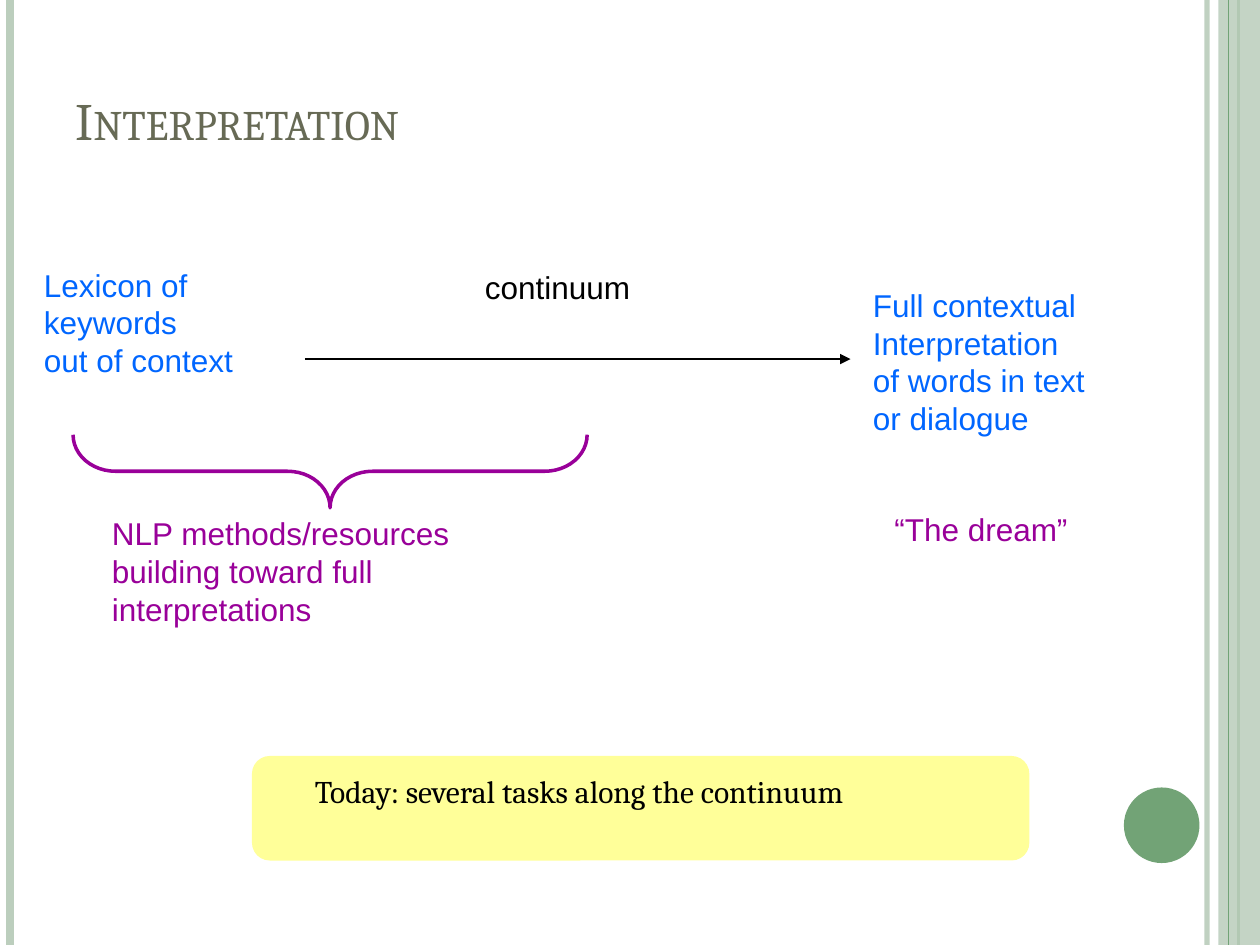
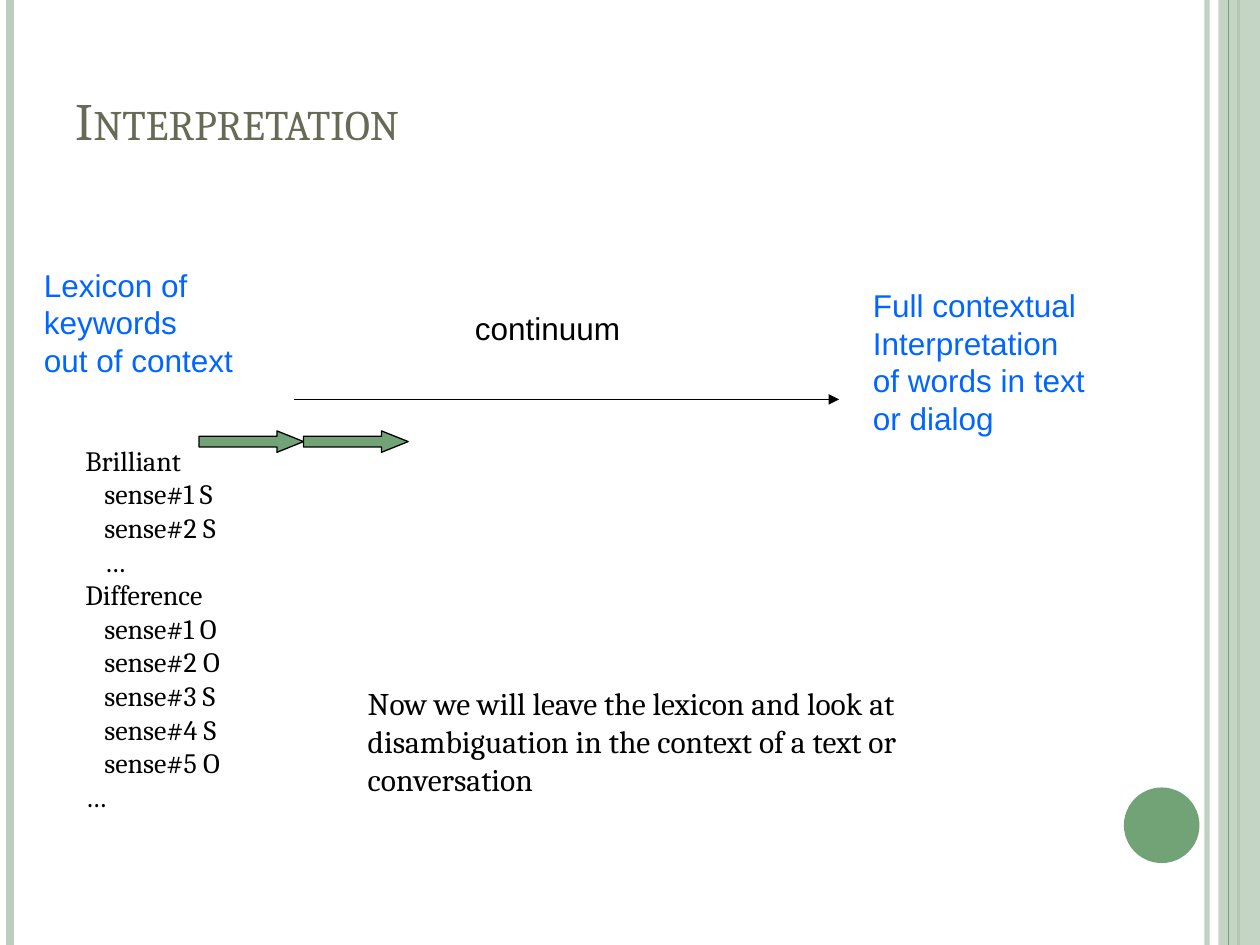
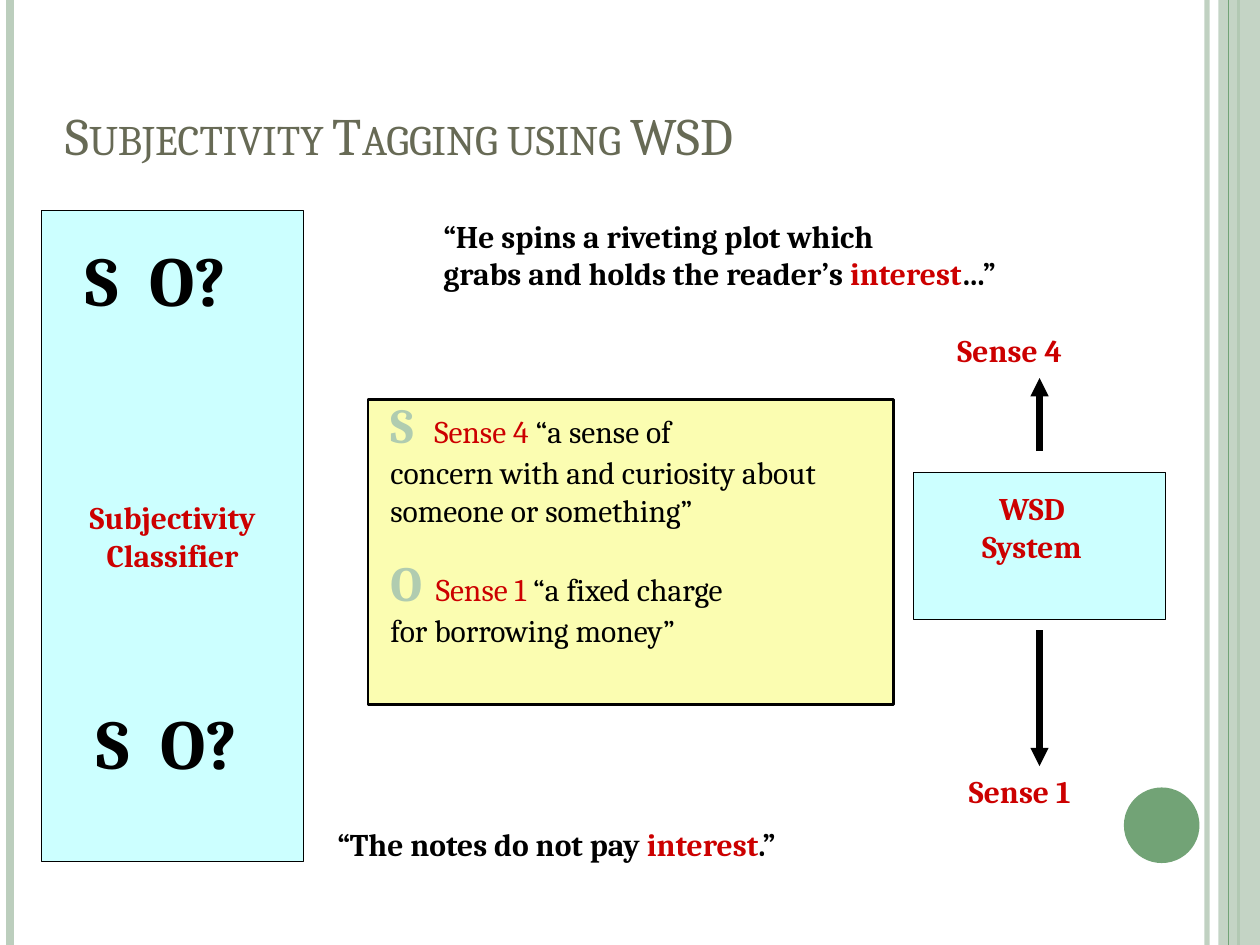
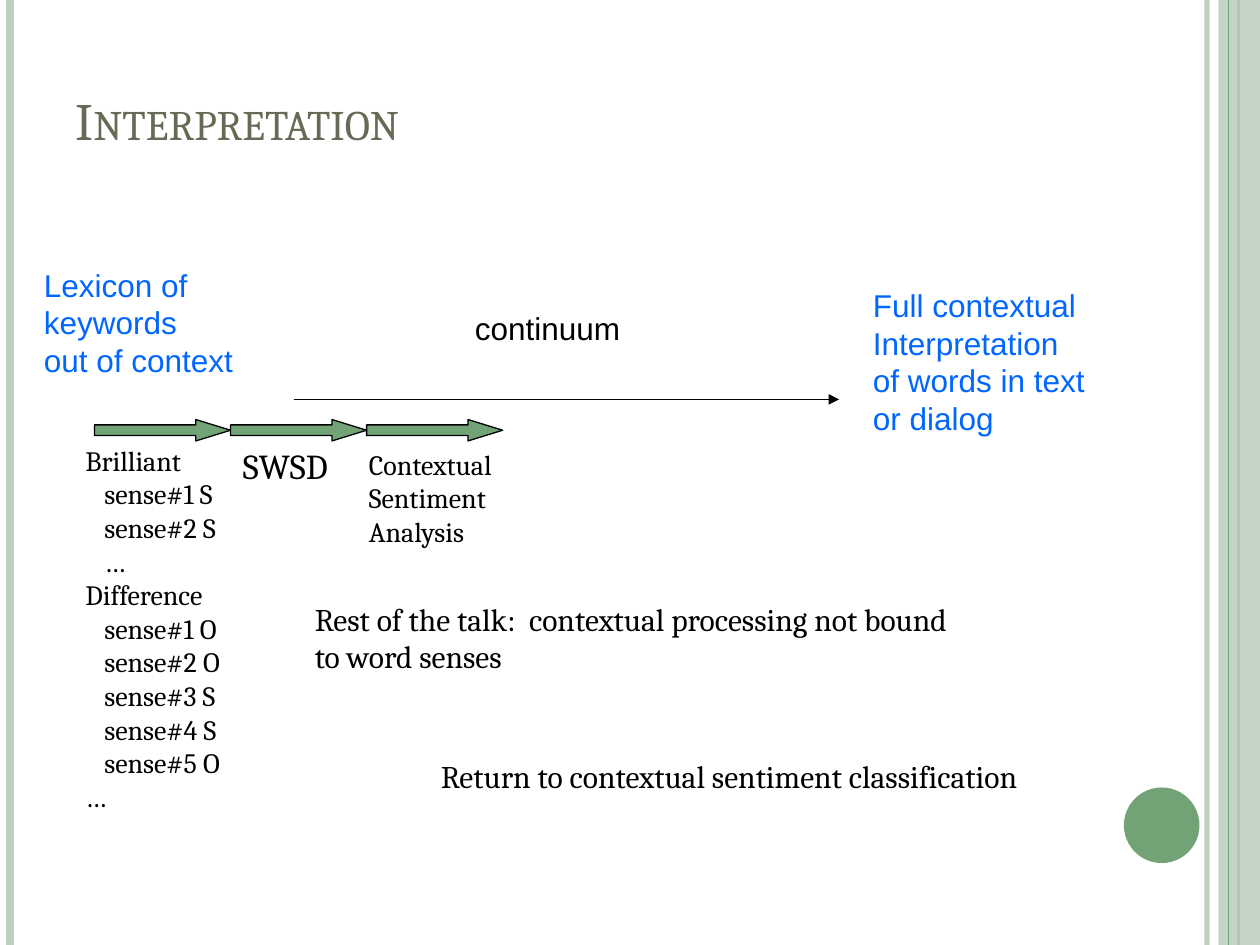
from pptx import Presentation
from pptx import util as u
from pptx.dml.color import RGBColor
from pptx.enum import shapes, text
from pptx.oxml.ns import qn
from lxml import etree

COLORS = {
    "black": "000000", "title": "676A55", "green": "72A376", "sage": "BCCEBD",
    "blue": "0066FF", "purple": "990099", "red": "CC0000", "tag": "B0CCB0",
    "cyan": "CCFFFF", "lemon": "FFFF99", "cream": "FBFDB1",
}
BODY = {"name": "Cambria", "size": 18, "color": "black"}
STRONG = {**BODY, "bold": True}
ALERT = {**STRONG, "color": "red"}
TITLE = {**BODY, "size": 30, "color": "title"}
SMALL = {**BODY, "size": 16}
QUESTION = {**STRONG, "size": 40}
PLAIN = {**BODY, "name": "Arial"}
ENDPOINT = {**PLAIN, "color": "blue"}
REMARK = {**PLAIN, "color": "purple"}
TAG = {**STRONG, "size": 28, "color": "tag"}
SENSE = {**BODY, "color": "red"}

SENSES = {
    "Brilliant": ["sense#1 S", "sense#2 S", "…"],
    "Difference": ["sense#1 O", "sense#2 O", "sense#3 S", "sense#4 S", "sense#5 O"],
    "…": [],
}


def rgb(color):
    return RGBColor.from_string(COLORS[color])


def inches(*lengths):
    return [u.Inches(length) for length in lengths]


def set_alpha(shape, percent):
    for color in shape.element.spPr.iter(qn("a:srgbClr")):
        etree.SubElement(color, qn("a:alpha"), val=str(percent * 1000))


def style_run(run, style):
    values = {**style, "size": u.Pt(style["size"])}
    run.font.color.rgb = rgb(values.pop("color"))
    for attribute, value in values.items():
        setattr(run.font, attribute, value)


def write(frame, lines, style, align=text.PP_ALIGN.LEFT):
    for number, line in enumerate(lines):
        paragraph = frame.paragraphs[0] if number == 0 else frame.add_paragraph()
        paragraph.alignment = align
        pieces = [(line, style)] if isinstance(line, str) else line
        for words, piece_style in pieces:
            run = paragraph.add_run()
            run.text = words
            style_run(run, piece_style)


def add_text(slide, box, lines, style=BODY, wrap=False, align=text.PP_ALIGN.LEFT):
    frame = slide.shapes.add_textbox(*inches(*box)).text_frame
    frame.word_wrap = wrap
    frame.auto_size = text.MSO_AUTO_SIZE.SHAPE_TO_FIT_TEXT
    write(frame, lines, style, align)
    return frame


def add_block(slide, preset, box, fill=None, line=None, width=0.75, adjustments=()):
    block = slide.shapes.add_shape(preset, *inches(*box))
    block.shadow.inherit = False
    if fill:
        block.fill.solid()
        block.fill.fore_color.rgb = rgb(fill)
    else:
        block.fill.background()
    if line:
        block.line.color.rgb = rgb(line)
        block.line.width = u.Pt(width)
    else:
        block.line.fill.background()
    for number, value in enumerate(adjustments):
        block.adjustments[number] = value
    return block


def add_line(slide, start, end, color, width, arrow=False):
    line = slide.shapes.add_connector(shapes.MSO_CONNECTOR.STRAIGHT, *inches(*start, *end))
    line.line.color.rgb = rgb(color)
    line.line.width = u.Pt(width)
    if arrow:
        etree.SubElement(line.line._get_or_add_ln(), qn("a:tailEnd"), type="triangle")
    etree.SubElement(line.element.spPr, qn("a:effectLst"))
    return line


def add_frame(slide):
    def rule(x, color, width):
        return add_line(slide, (x, 0), (x, 7.5), color, width)

    set_alpha(rule(9.58, "sage", 3), 93)
    rule(0.08, "sage", 4.5)
    rule(9.83, "green", 1.5)
    band = add_block(slide, shapes.MSO_SHAPE.RECTANGLE, (9.67, 0, 0.33, 7.5), "sage")
    set_alpha(band, 87)
    rule(9.75, "green", 0.75)
    add_block(slide, shapes.MSO_SHAPE.OVAL, (8.92, 6.25, 0.6, 0.6), "green")


def add_title(slide, words, box=(0.5, 0.3, 8.17, 0.95)):
    frame = slide.shapes.add_textbox(*inches(*box)).text_frame
    frame.word_wrap = True
    frame.vertical_anchor = text.MSO_ANCHOR.BOTTOM
    write(frame, [words], TITLE)
    frame.paragraphs[0].runs[0]._r.get_or_add_rPr().set("cap", "small")


def add_continuum(slide, goal, label, start):
    add_title(slide, "Interpretation")
    add_text(slide, (0.25, 2.06, 2.2, 1.3),
             ["Lexicon of", "keywords", "out of context"], ENDPOINT)
    add_text(slide, (6.83, 2.22, 2.53, 1.7),
             ["Full contextual", "Interpretation", "of words in text", goal], ENDPOINT)
    add_text(slide, (*label, 1.74, 0.5), ["continuum"], PLAIN)
    x, y = start
    add_line(slide, start, (x + 4.33, y), "black", 0.75, arrow=True)


def add_steps(slide, left, top, width, count):
    for step in range(count):
        add_block(slide, shapes.MSO_SHAPE.RIGHT_ARROW,
                  (left + step * width, top, width, 0.17),
                  "green", "black", adjustments=(0.5, width * 1.5))


def add_senses(slide):
    lines = [line for word, senses in SENSES.items() for line in (word, *senses)]
    frame = add_text(slide, (0.58, 3.47, 1.29, 3.04), lines, SMALL)
    nested = [kind for senses in SENSES.values() for kind in (False, *[True] * len(senses))]
    for paragraph, indented in zip(frame.paragraphs, nested):
        if indented:
            paragraph._p.get_or_add_pPr().set("marL", str(u.Inches(0.15)))


def build_overview(slide):
    add_continuum(slide, "or dialogue", (3.75, 2.08), (2.42, 2.85))
    add_text(slide, (7, 4, 2.04, 0.5), ["“The dream”"], REMARK)
    brace = add_block(slide, shapes.MSO_SHAPE.LEFT_BRACE, (2.33, 1.7, 0.58, 4.08),
                      line="purple", width=2, adjustments=(0.58, 0.5))
    brace.rotation = 270
    add_text(slide, (0.79, 4.03, 3.78, 1.3),
             ["NLP methods/resources", "building toward full", "interpretations"], REMARK)
    add_block(slide, shapes.MSO_SHAPE.ROUNDED_RECTANGLE, (2, 6, 6.17, 0.83), "lemon",
              adjustments=(0.17,))
    add_text(slide, (2.4, 6.08, 5.82, 0.5), ["Today: several tasks along the continuum"])


def build_lexicon(slide):
    add_continuum(slide, "or dialog", (3.67, 2.4), (2.33, 3.17))
    add_steps(slide, 1.58, 3.42, 0.83, 2)
    add_senses(slide)
    add_text(slide, (2.82, 5.38, 5.91, 1.3),
             ["Now we will leave the lexicon and look at",
              "disambiguation in the context of a text or", "conversation"])


def build_tagging(slide):
    box = shapes.MSO_SHAPE.RECTANGLE
    center = text.PP_ALIGN.CENTER
    classifier = add_block(slide, box, (0.33, 1.67, 2.08, 5.17), "cyan", "black").text_frame
    classifier.word_wrap = False
    classifier.vertical_anchor = text.MSO_ANCHOR.MIDDLE
    write(classifier, ["Subjectivity", "Classifier"], ALERT, center)

    add_block(slide, box, (2.92, 3.17, 4.17, 2.42), "cream", "black", 1.5)
    definitions = add_text(slide, (3, 3.08, 4.33, 2.42), [
        [("S", TAG), (" ", ALERT), ("  Sense 4", SENSE), (" “a sense of", BODY)],
        "concern with and curiosity about someone or something”",
        [("O", TAG), ("  ", BODY), ("Sense 1 ", SENSE), ("“a fixed charge", BODY)],
        "for borrowing money”",
    ], wrap=True)
    definitions.paragraphs[2].line_spacing = 1.4

    add_title(slide, "Subjectivity Tagging using WSD", (0.42, 0.17, 8.49, 1.2))
    add_text(slide, (2.58, 6.5, 4.74, 0.5), [
        [("“The notes do not pay ", STRONG), ("interest", ALERT), (".”", STRONG)]])
    add_text(slide, (3.42, 1.67, 6, 0.9), [
        "“He spins a riveting plot which",
        [("grabs and holds the reader’s ", STRONG), ("interest", ALERT), ("…”", STRONG)],
    ], STRONG)

    add_block(slide, box, (7.25, 3.75, 2, 1.17), "cyan", "black")
    add_text(slide, (7.58, 3.83, 1.22, 0.9), ["WSD", "System"], ALERT, align=center)
    for sense, place, start, end in (
        ("Sense 4", (7.5, 2.58), 3.58, 3),
        ("Sense 1", (7.59, 6.08), 5, 6.08),
    ):
        add_text(slide, (*place, 1.25, 0.5), [sense], ALERT)
        add_line(slide, (8.25, start), (8.25, end), "black", 3.5, arrow=True)
    for place in ((0.58, 1.83), (0.67, 5.5)):
        add_text(slide, (*place, 1.5, 0.77), ["S  O?"], QUESTION)


def build_context(slide):
    add_continuum(slide, "or dialog", (3.67, 2.4), (2.33, 3.17))
    add_senses(slide)
    add_steps(slide, 0.75, 3.33, 1.08, 3)
    add_text(slide, (1.83, 3.48, 0.91, 0.43), ["SWSD"], {**BODY, "size": 20})
    add_text(slide, (2.83, 3.5, 1.18, 1.24), ["Contextual", "Sentiment", "Analysis"], SMALL)
    add_text(slide, (2.4, 4.71, 6.8, 0.9),
             ["Rest of the talk:  contextual processing not bound", "to word senses"])
    add_text(slide, (3.4, 5.96, 6.14, 0.5),
             ["Return to contextual sentiment classification"])


def main():
    deck = Presentation()
    deck.slide_width, deck.slide_height = inches(10, 7.5)
    for build in (build_overview, build_lexicon, build_tagging, build_context):
        slide = deck.slides.add_slide(deck.slide_layouts[6])
        add_frame(slide)
        build(slide)
    deck.save("out.pptx")


if __name__ == "__main__":
    main()
